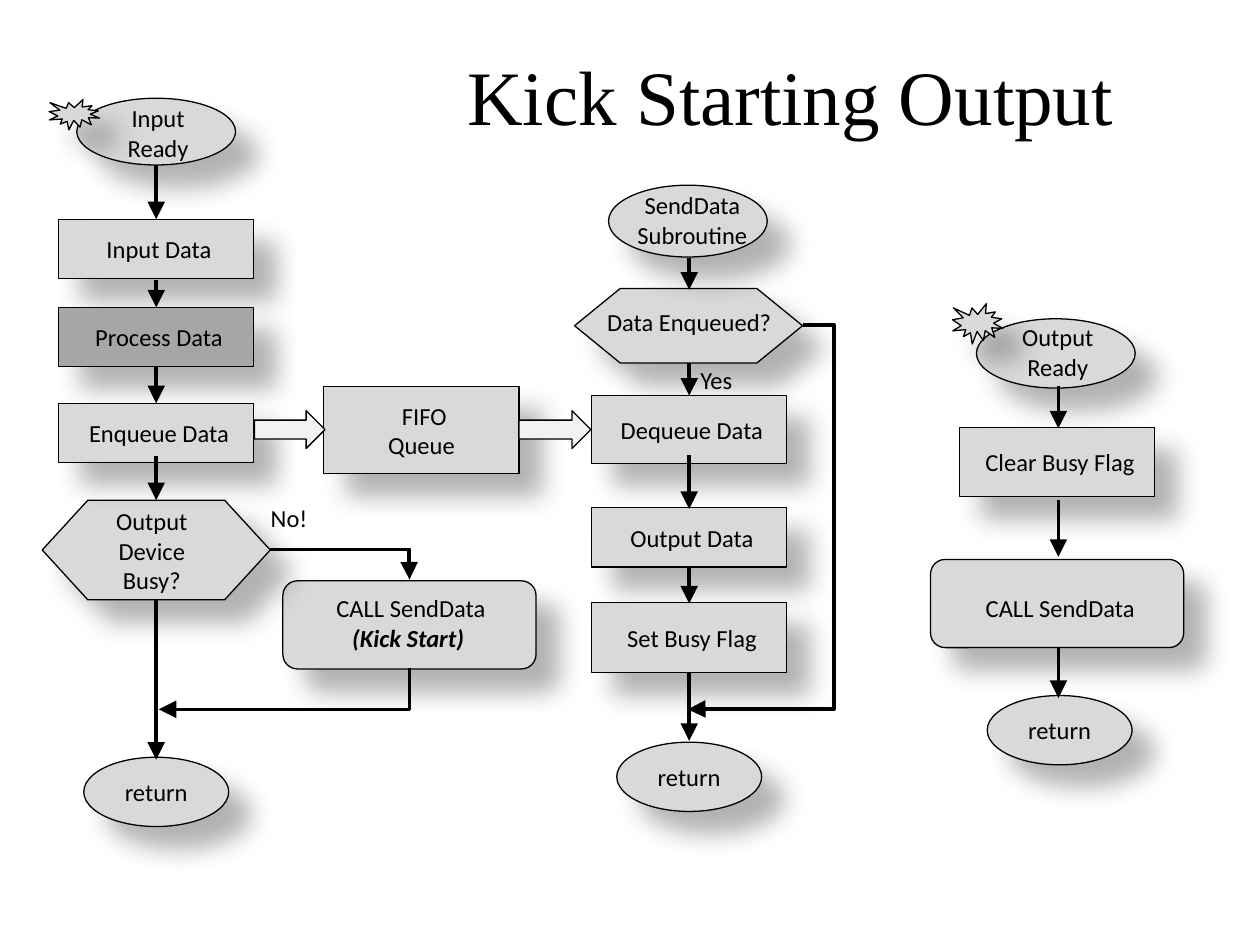
from dataclasses import dataclass

from lxml import etree
from pptx import Presentation
from pptx import util as u
from pptx.dml.color import RGBColor
from pptx.enum import shapes, text
from pptx.oxml.ns import qn

BLACK = RGBColor(0x00, 0x00, 0x00)
LIGHT = RGBColor(0xD9, 0xD9, 0xD9)
DARK = RGBColor(0xA6, 0xA6, 0xA6)
PALE = RGBColor(0xF2, 0xF2, 0xF2)

KIND = shapes.MSO_SHAPE
OVAL, RECT, ROUND = KIND.OVAL, KIND.RECTANGLE, KIND.ROUNDED_RECTANGLE
TEST, BURST, PIPE = KIND.FLOWCHART_PREPARATION, KIND.EXPLOSION1, KIND.RIGHT_ARROW
MID, LEFT = text.PP_ALIGN.CENTER, text.PP_ALIGN.LEFT

deck = Presentation()
deck.slide_width, deck.slide_height = u.Inches(10), u.Inches(7.5)
COL, ROW = deck.slide_width / 100, deck.slide_height / 75

# Centre columns of the three flows and of the queue
IN, SEND, OUT, QUEUE = 12.4, 54.7, 83.9, 33.45


@dataclass
class Node:
    """A flowchart shape, placed by its centre column and top row."""
    kind: int
    mid: float
    top: float
    wide: float
    high: float
    words: str = ""
    fill: RGBColor = LIGHT
    shade: bool = True


@dataclass
class Label:
    left: float
    top: float
    wide: float
    high: float
    lines: tuple
    align: int = MID


@dataclass
class Bend:
    """An elbow connector: its frame before turning, preset and adjustments."""
    left: float
    top: float
    wide: float
    high: float
    preset: str
    turn: int = 0
    flip: bool = False
    adjust: tuple = ()


NODES = [
    Node(TEST, 54.65, 22.9, 18.1, 5.9),
    Node(ROUND, OUT, 44.4, 20.1, 7),
    Node(OVAL, 83.8, 25.3, 12.6, 5.5),
    Node(OVAL, 54.6, 14.7, 12.6, 5.7),
    Node(ROUND, 32.5, 46.1, 20.1, 7),
    Node(TEST, IN, 39.7, 18.1, 7.9),
    Node(OVAL, IN, 7.8, 12.6, 5.3),
    Node(RECT, SEND, 31.4, 15.5, 5.4, " Dequeue Data"),
    Node(RECT, QUEUE, 30.7, 15.5, 6.9, " FIFO\nQueue"),
    Node(RECT, OUT, 33.9, 15.5, 5.5, " Clear Busy Flag"),
    Node(RECT, SEND, 40.3, 15.5, 4.7, " Output Data"),
    Node(RECT, IN, 17.4, 15.5, 4.7, " Input Data"),
    Node(RECT, IN, 24.4, 15.5, 4.7, " Process Data", DARK),
    Node(RECT, IN, 32, 15.5, 4.7, " Enqueue Data"),
    Node(BURST, 5.9, 7.9, 4, 2.4),
    Node(BURST, 77.6, 24.1, 4, 3.2),
    Node(RECT, SEND, 47.8, 15.5, 5.6, " Set Busy Flag"),
    Node(OVAL, IN, 60.1, 11.5, 5.5, "return"),
    Node(OVAL, SEND, 58.9, 11.5, 5.5, "return"),
    Node(OVAL, 84.1, 55.2, 11.5, 5.5, "return"),
    Node(PIPE, 44.05, 32.6, 5.7, 3, "", PALE, False),
    Node(PIPE, 23, 32.6, 5.6, 3, "", PALE, False),
]

LABELS = [
    Label(45.2, 23.9, 19, 4.8, ("Data Enqueued?",)),
    Label(72.2, 46.6, 23.9, 3.6, ("CALL SendData",)),
    Label(47.5, 14.6, 14.9, 3.9, ("SendData Subroutine",)),
    Label(54.6, 28.5, 7.3, 2.8, ("Yes",), LEFT),
    Label(20.5, 39.4, 6.9, 2.8, ("No!",), LEFT),
    Label(5.4, 39.7, 13.3, 6.4, ("Output", "Device", "Busy?")),
    Label(5.1, 7.7, 14.9, 4.1, ("Input", "Ready")),
    Label(21.7, 46.6, 21.4, 4.6, (" CALL SendData", "(Kick Start)")),
    Label(76.5, 25.1, 14.9, 4.4, ("Output", "Ready")),
]

# Centre column of each flow, then the rows where its arrows start and end
FLOWS = [
    (IN, [(13.1, 17.4), (22.2, 24.4), (29.1, 32), (36.2, 39.7), (47.6, 60.3)]),
    (SEND, [(20.5, 23), (28.8, 31.4), (36.1, 40.4), (44.9, 47.9), (53.4, 58.8)]),
    (84, [(30.6, 34), (39.7, 44.2), (51.4, 55.4)]),
]

BENDS = [
    Bend(20.9, 44.7, 3.3, 19.9, "bentConnector2", turn=90),
    Bend(21.4, 43.6, 11.1, 2.4, "bentConnector3", adjust=(99800,)),
    Bend(54.6, 25.8, 9.1, 30.5, "bentConnector4", flip=True, adjust=(-27600, 99900)),
]


def area(left: float, top: float, wide: float, high: float) -> list:
    """Turn grid columns and rows into slide lengths."""
    return [u.Emu(round(n * size)) for n, size in zip((left, top, wide, high), (COL, ROW) * 2)]


def write(frame, lines: tuple, align: int, face: str = "Calibri", size: int = 14) -> None:
    for i, line in enumerate(lines):
        para = frame.paragraphs[0] if i == 0 else frame.add_paragraph()
        para.alignment = align
        run = para.add_run()
        run.text = line
        font = run.font
        font.name, font.size = face, u.Pt(size)
        font.color.rgb = BLACK
        if line == "(Kick Start)":
            font.bold = font.italic = True


def cast(shape) -> None:
    """Give a shape a soft shadow to the lower right."""
    effects = shape.element.spPr.find(qn("a:effectLst"))
    shadow = etree.SubElement(effects, qn("a:outerShdw"), blurRad=str(u.Pt(15)),
                              dist=str(u.Pt(18)), dir="2700000", algn="tl", rotWithShape="0")
    tint = etree.SubElement(shadow, qn("a:srgbClr"), val=str(BLACK))
    etree.SubElement(tint, qn("a:alpha"), val="30000")


def draw(page, node: Node) -> None:
    shape = page.shapes.add_shape(
        node.kind, *area(node.mid - node.wide / 2, node.top, node.wide, node.high))
    shape.fill.solid()
    shape.fill.fore_color.rgb = node.fill
    shape.line.color.rgb = BLACK
    shape.line.width = u.Pt(0.75)
    shape.shadow.inherit = False
    if node.shade:
        cast(shape)
    if node.words:
        shape.text_frame.vertical_anchor = text.MSO_ANCHOR.MIDDLE
        write(shape.text_frame, node.words.split("\n"), MID)


def note(page, label: Label) -> None:
    frame = page.shapes.add_textbox(
        *area(label.left, label.top, label.wide, label.high)).text_frame
    frame.word_wrap = True
    write(frame, label.lines, label.align)


def link(page, kind: int, left: float, top: float, right: float, foot: float):
    """Add a black connector that ends in a large arrowhead."""
    wire = page.shapes.add_connector(kind, *area(left, top, right, foot))
    wire.line.color.rgb = BLACK
    wire.line.width = u.Pt(2)
    etree.SubElement(wire.line._get_or_add_ln(), qn("a:tailEnd"),
                     type="triangle", w="lg", len="lg")
    etree.SubElement(wire.element.spPr, qn("a:effectLst"))
    return wire


def bend(page, item: Bend) -> None:
    ends = [item.left, item.left + item.wide]
    if item.flip:
        ends.reverse()
    wire = link(page, shapes.MSO_CONNECTOR.ELBOW, ends[0], item.top,
                ends[1], item.top + item.high)
    props = wire.element.spPr
    if item.turn:
        props.find(qn("a:xfrm")).set("rot", str(item.turn * 60000))
    form = props.find(qn("a:prstGeom"))
    form.set("prst", item.preset)
    guides = form.find(qn("a:avLst"))
    for i, value in enumerate(item.adjust, 1):
        etree.SubElement(guides, qn("a:gd"), name=f"adj{i}", fmla=f"val {value}")


def main() -> None:
    page = deck.slides.add_slide(deck.slide_layouts[5])
    title = page.shapes.title
    title.left, title.top, title.width, title.height = area(29.2, 1.7, 67.1, 11.7)
    title.text_frame.vertical_anchor = text.MSO_ANCHOR.MIDDLE
    write(title.text_frame, ("Kick Starting Output",), MID, "Times New Roman", 44)
    for node in NODES:
        draw(page, node)
    for label in LABELS:
        note(page, label)
    for mid, steps in FLOWS:
        for top, foot in steps:
            link(page, shapes.MSO_CONNECTOR.STRAIGHT, mid, top, mid, foot)
    for item in BENDS:
        bend(page, item)
    deck.save("out.pptx")


if __name__ == "__main__":
    main()
